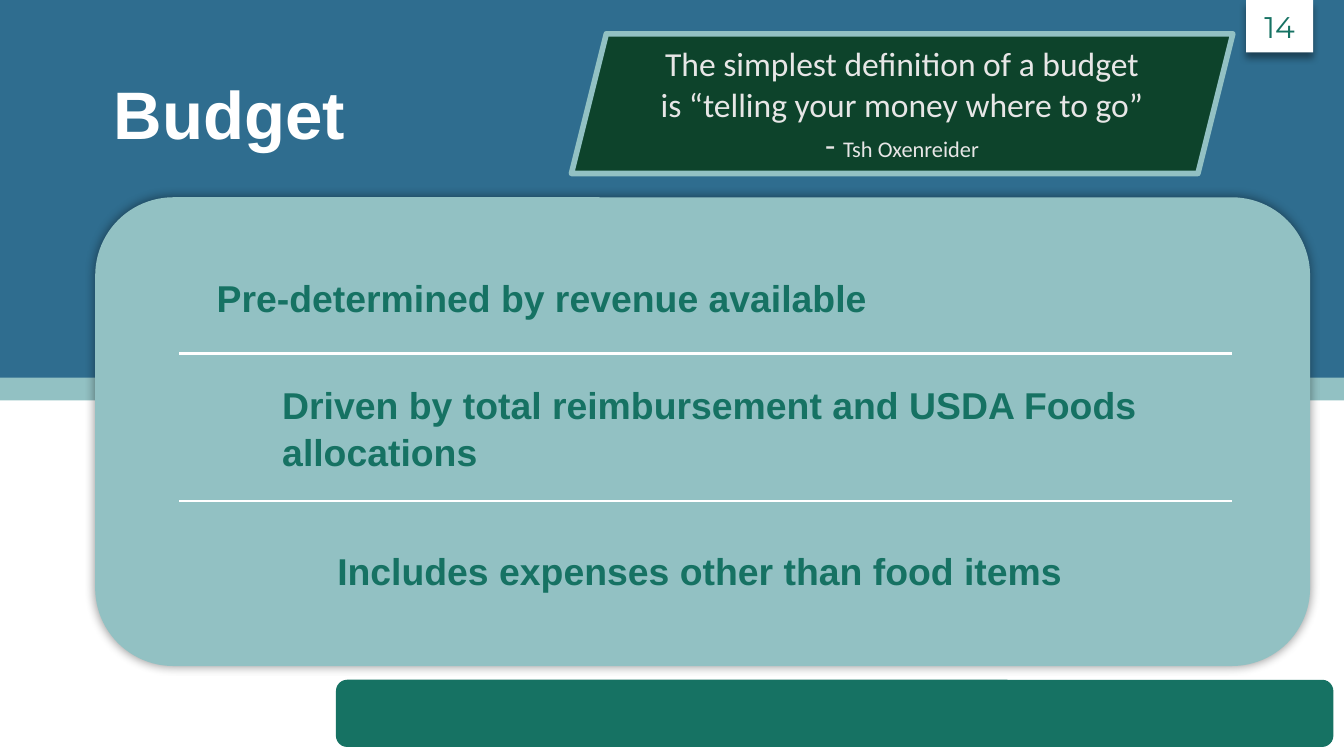
from lxml.etree import SubElement
from pptx import Presentation
from pptx.dml.color import RGBColor
from pptx.enum.shapes import MSO_CONNECTOR as Connector, MSO_SHAPE as Preset
from pptx.enum.text import MSO_ANCHOR as Anchor, MSO_AUTO_SIZE as AutoSize, PP_ALIGN as Align
from pptx.oxml.ns import qn
from pptx.util import Cm, Pt

COLORS = {
    "white": "FFFFFF",
    "blue": "2F6D8F",
    "mint": "92C1C3",
    "green": "167263",
    "forest": "0D432B",
    "light": "E7E6E6",
    "black": "000000",
}
ROWS = [
    (1, "Pre-determined by revenue available", (3.84, 5.03, 16.79, 2.01)),
    (2, "Driven by total reimbursement and USDA Foods allocations", (5.08, 7.06, 17.35, 2.01)),
    (3, "Includes expenses other than food items", (6.12, 10.19, 18.36, 2.01)),
]
DIVIDERS = (6.68, 9.47)


def color(name):
    """Return the palette colour with this name."""
    return RGBColor.from_string(COLORS[name])


def add_text(paragraph, text, *, size, font, fill, bold=False, align=Align.LEFT):
    """Add a formatted run to a paragraph."""
    paragraph.alignment = align
    run = paragraph.add_run()
    run.text = text
    run.font.size = Pt(size)
    run.font.name = font
    run.font.bold = bold
    run.font.color.rgb = color(fill)


def add_shadow(shape, blur, distance=0, angle=0):
    """Give a shape a soft black outer shadow."""
    effects = shape.element.spPr.find(qn("a:effectLst"))
    shadow = SubElement(effects, qn("a:outerShdw"), blurRad=str(Pt(blur)), dist=str(Pt(distance)),
                        dir=str(angle * 60000), algn="ctr", rotWithShape="0")
    tint = SubElement(shadow, qn("a:srgbClr"), val=COLORS["black"])
    SubElement(tint, qn("a:alpha"), val="40000")


def add_block(slide, preset, box, fill, outline=None):
    """Add a filled preset shape with an optional outline."""
    shape = slide.shapes.add_shape(preset, *map(Cm, box))
    shape.shadow.inherit = False
    shape.fill.solid()
    shape.fill.fore_color.rgb = color(fill)
    if outline:
        shape.line.color.rgb = color(outline)
        shape.line.width = Pt(3)
    else:
        shape.line.fill.background()
    shape.text_frame.word_wrap = True
    shape.text_frame.vertical_anchor = Anchor.MIDDLE
    return shape


def add_divider(slide, top):
    """Add a white horizontal line across the card."""
    line = slide.shapes.add_connector(Connector.STRAIGHT, Cm(3.38), Cm(top), Cm(23.29), Cm(top))
    line.line.color.rgb = color("white")
    line.line.width = Pt(1.5)
    SubElement(line.element.spPr, qn("a:effectLst"))


def fill_placeholder(slide, index, text, box, inset=0.13, **style):
    """Place a placeholder in front and fill it with one unbulleted paragraph."""
    shape = next(item for item in slide.placeholders if item.placeholder_format.idx == index)
    shape.left, shape.top, shape.width, shape.height = map(Cm, box)
    slide.shapes.element.append(shape.element)
    frame = shape.text_frame
    frame.auto_size = AutoSize.NONE
    frame.word_wrap = True
    frame.vertical_anchor = Anchor.TOP
    frame.margin_top = Cm(inset)
    paragraph = frame.paragraphs[0]
    properties = paragraph._p.get_or_add_pPr()
    properties.set("marL", "0")
    properties.set("indent", "0")
    SubElement(properties, qn("a:buNone"))
    paragraph.space_before = Pt(0)
    paragraph.line_spacing = 1.05
    add_text(paragraph, text, font="Arial", bold=True, **style)


def add_quote(slide):
    """Add the quotation with its author in a slanted frame."""
    frame = add_block(slide, Preset.PARALLELOGRAM, (10.8, 0.64, 12.5, 2.64), "forest", "mint").text_frame
    style = {"font": "Calibri", "fill": "light", "align": Align.CENTER}
    add_text(frame.paragraphs[0],
             "The simplest definition of a budget is “telling your money where to go”", size=18, **style)
    author = frame.add_paragraph()
    add_text(author, "- ", size=18, **style)
    add_text(author, "Tsh Oxenreider", size=12, **style)


def add_page_number(slide, number):
    """Add the white page number tab at the top edge."""
    tab = add_block(slide, Preset.RECTANGLE, (23.55, 0, 1.27, 0.99), "white")
    add_shadow(tab, 4, 3, 90)
    add_text(tab.text_frame.paragraphs[0], number, size=16, font="Montserrat", fill="green",
             align=Align.CENTER)


def main():
    """Build the budget slide."""
    presentation = Presentation()
    presentation.slide_width, presentation.slide_height = Cm(25.4), Cm(14.29)
    slide = presentation.slides.add_slide(presentation.slide_layouts.get_by_name("Comparison"))
    unused = next(item for item in slide.placeholders if item.placeholder_format.idx == 4)
    slide.shapes.element.remove(unused.element)

    add_block(slide, Preset.RECTANGLE, (0, 6.73, 25.4, 0.84), "mint")
    add_block(slide, Preset.RECTANGLE, (0, 0, 25.4, 7.14), "blue")
    card = add_block(slide, Preset.ROUNDED_RECTANGLE, (1.8, 3.73, 22.96, 8.86), "mint")
    add_shadow(card, 5)
    add_block(slide, Preset.ROUNDED_RECTANGLE, (6.35, 12.85, 18.85, 1.27), "green")

    fill_placeholder(slide, 0, "Budget", (1.9, 1.07, 10.59, 3.33), inset=0.23, size=36, fill="white")
    for index, text, box in ROWS:
        fill_placeholder(slide, index, text, box, size=20, fill="green")
    for top in DIVIDERS:
        add_divider(slide, top)
    add_page_number(slide, "14")
    add_quote(slide)
    presentation.save("out.pptx")


if __name__ == "__main__":
    main()
